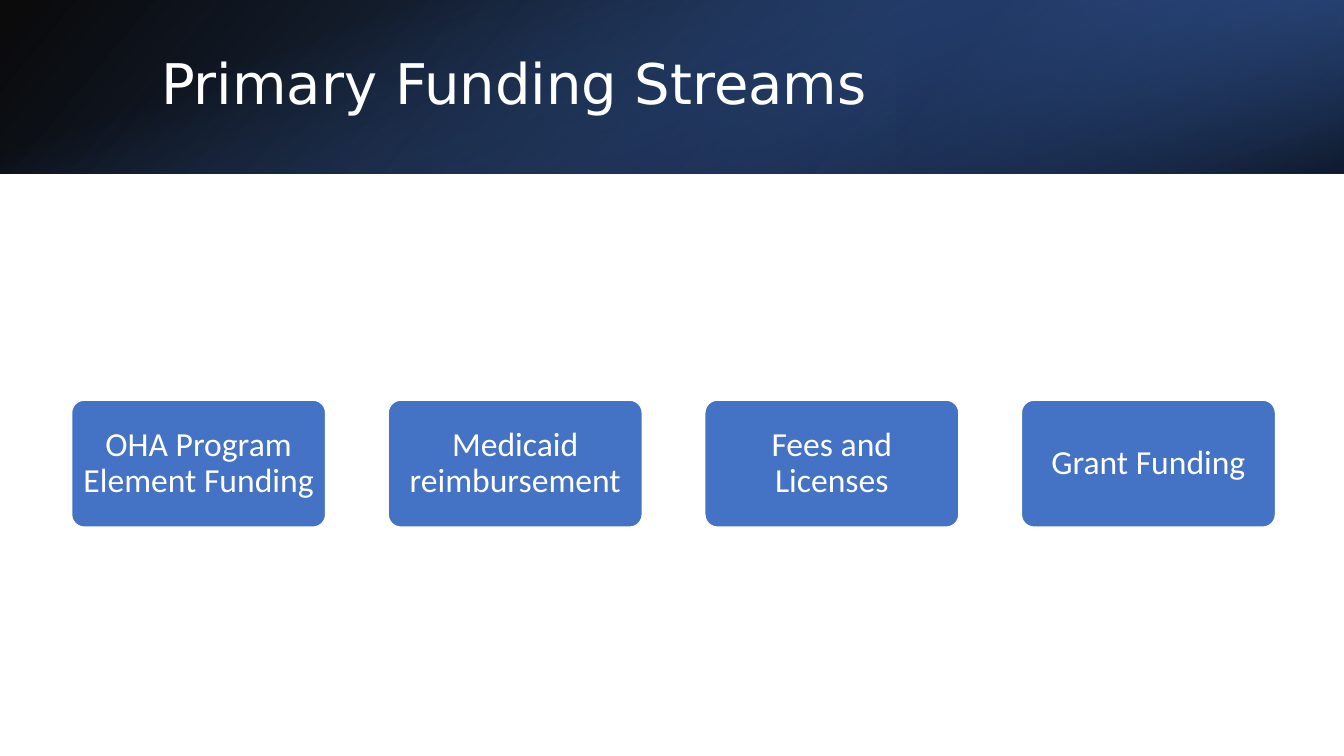
from dataclasses import dataclass

from lxml import etree
from pptx import Presentation
from pptx.dml.color import RGBColor
from pptx.enum.shapes import MSO_SHAPE
from pptx.enum.text import MSO_ANCHOR, PP_ALIGN
from pptx.oxml.ns import qn
from pptx.shapes.autoshape import Shape
from pptx.slide import Slide
from pptx.util import Inches, Pt

RECT = MSO_SHAPE.RECTANGLE
ROUND = MSO_SHAPE.ROUNDED_RECTANGLE
MIDDLE = MSO_ANCHOR.MIDDLE
CENTER = PP_ALIGN.CENTER
LEFT = PP_ALIGN.LEFT

WHITE = "FFFFFF"
BLUE = "4472C4"
WIDTH, HEIGHT = 13.33, 7.5
BAND = 1.72


@dataclass
class Stop:
    place: int
    color: str
    alpha: int


@dataclass
class Layer:
    left: float
    top: float
    width: float
    height: float
    turn: int
    flip: bool
    angle: int
    stops: list[Stop]


LAYERS = [
    Layer(0, 0, WIDTH, BAND, 0, True, 140,
          [Stop(0, "000000", 96), Stop(100, "2F5597", 100)]),
    Layer(8.89, 0, 4.44, BAND, 180, True, 320,
          [Stop(19, "203864", 68), Stop(100, BLUE, 79)]),
    Layer((WIDTH - BAND) / 2, (BAND - WIDTH) / 2, BAND, WIDTH, 90, False, 340,
          [Stop(23, BLUE, 0), Stop(99, "000000", 74)]),
]
STREAMS = [
    "OHA Program Element Funding",
    "Medicaid reimbursement",
    "Fees and Licenses",
    "Grant Funding",
]
START, PITCH = 0.71, 3.14


def rgb(code: str) -> RGBColor:
    return RGBColor.from_string(code)


def shade(shape: Shape, layer: Layer) -> None:
    props = shape.fill._xPr
    grad = etree.Element(qn("a:gradFill"), rotWithShape="1")
    stops = etree.SubElement(grad, qn("a:gsLst"))
    for stop in layer.stops:
        mark = etree.SubElement(stops, qn("a:gs"), pos=str(stop.place * 1000))
        color = etree.SubElement(mark, qn("a:srgbClr"), val=stop.color)
        etree.SubElement(color, qn("a:alpha"), val=str(stop.alpha * 1000))
    etree.SubElement(grad, qn("a:lin"), ang=str(layer.angle * 60000), scaled="0")
    props.find(qn("a:prstGeom")).addnext(grad)


def draw_layer(slide: Slide, layer: Layer) -> None:
    shape = slide.shapes.add_shape(
        RECT, Inches(layer.left), Inches(layer.top),
        Inches(layer.width), Inches(layer.height))
    shape.shadow.inherit = False
    shape.line.fill.background()
    shape.rotation = layer.turn
    if layer.flip:
        shape.fill._xPr.find(qn("a:xfrm")).set("flipH", "1")
    shade(shape, layer)


def write(shape: Shape, text: str, font: str, size: int, align: PP_ALIGN) -> None:
    frame = shape.text_frame
    frame.word_wrap = True
    frame.vertical_anchor = MIDDLE
    para = frame.paragraphs[0]
    para.text = text
    para.alignment = align
    para.line_spacing = 0.9
    para.font.name = font
    para.font.size = Pt(size)
    para.font.color.rgb = rgb(WHITE)


def draw_stream(slide: Slide, left: float, text: str) -> None:
    box = slide.shapes.add_shape(
        ROUND, Inches(left), Inches(3.97), Inches(2.52), Inches(1.26))
    box.shadow.inherit = False
    box.adjustments[0] = 0.1
    box.fill.solid()
    box.fill.fore_color.rgb = rgb(BLUE)
    box.line.color.rgb = rgb(WHITE)
    box.line.width = Pt(1)
    frame = box.text_frame
    frame.margin_left = frame.margin_right = Inches(0.05)
    frame.margin_top = frame.margin_bottom = Inches(0.03)
    write(box, text, "Calibri", 24, CENTER)


def main() -> None:
    deck = Presentation()
    deck.slide_width, deck.slide_height = Inches(WIDTH), Inches(HEIGHT)
    slide = deck.slides.add_slide(deck.slide_layouts[6])
    slide.background.fill.solid()
    slide.background.fill.fore_color.rgb = rgb(WHITE)
    for layer in LAYERS:
        draw_layer(slide, layer)
    title = slide.shapes.add_textbox(
        Inches(1.5), Inches(0.38), Inches(10.98), Inches(0.96))
    write(title, "Primary Funding Streams", "DejaVu Sans", 40, LEFT)
    for index, text in enumerate(STREAMS):
        draw_stream(slide, START + index * PITCH, text)
    deck.save("out.pptx")


if __name__ == "__main__":
    main()
